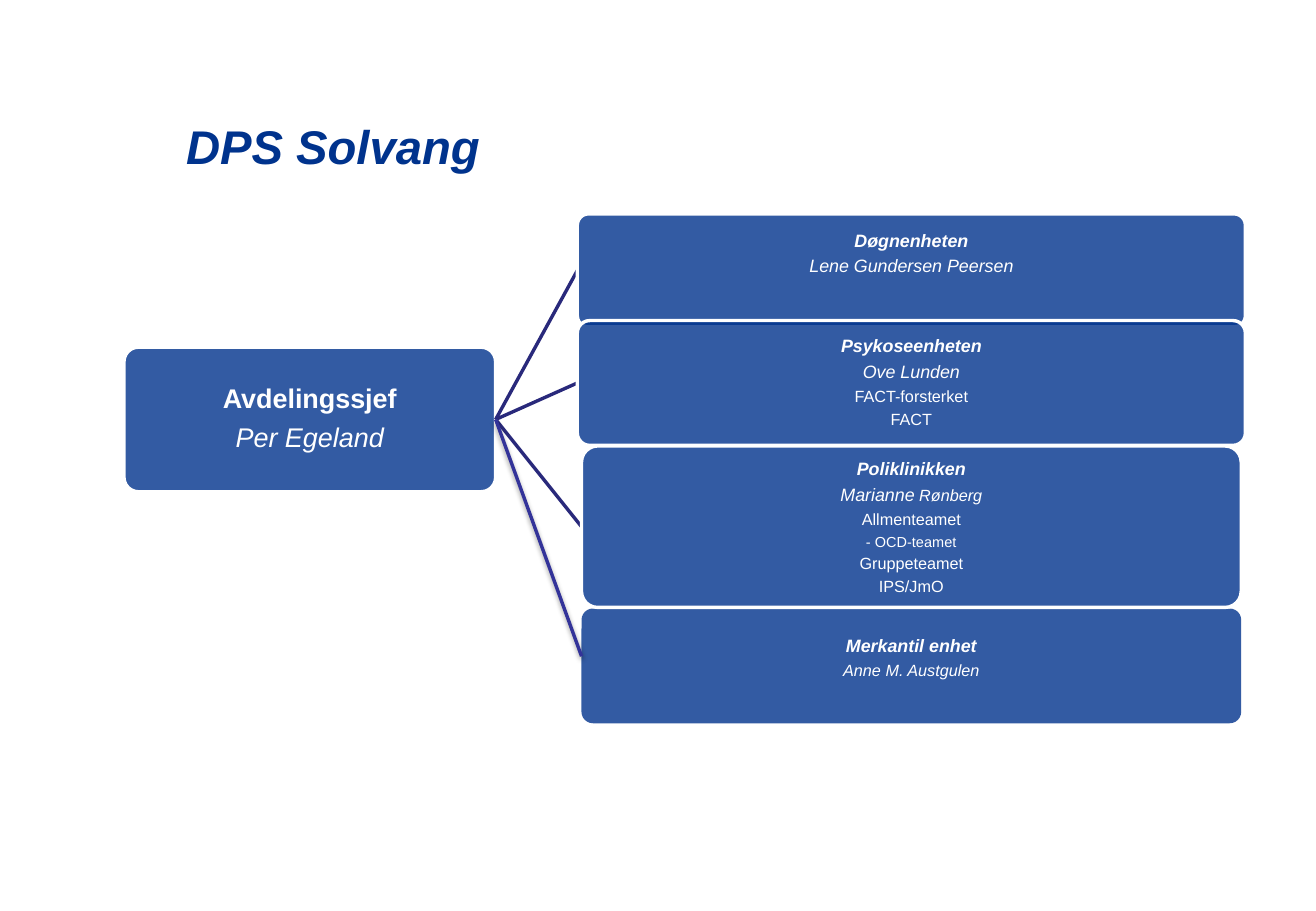
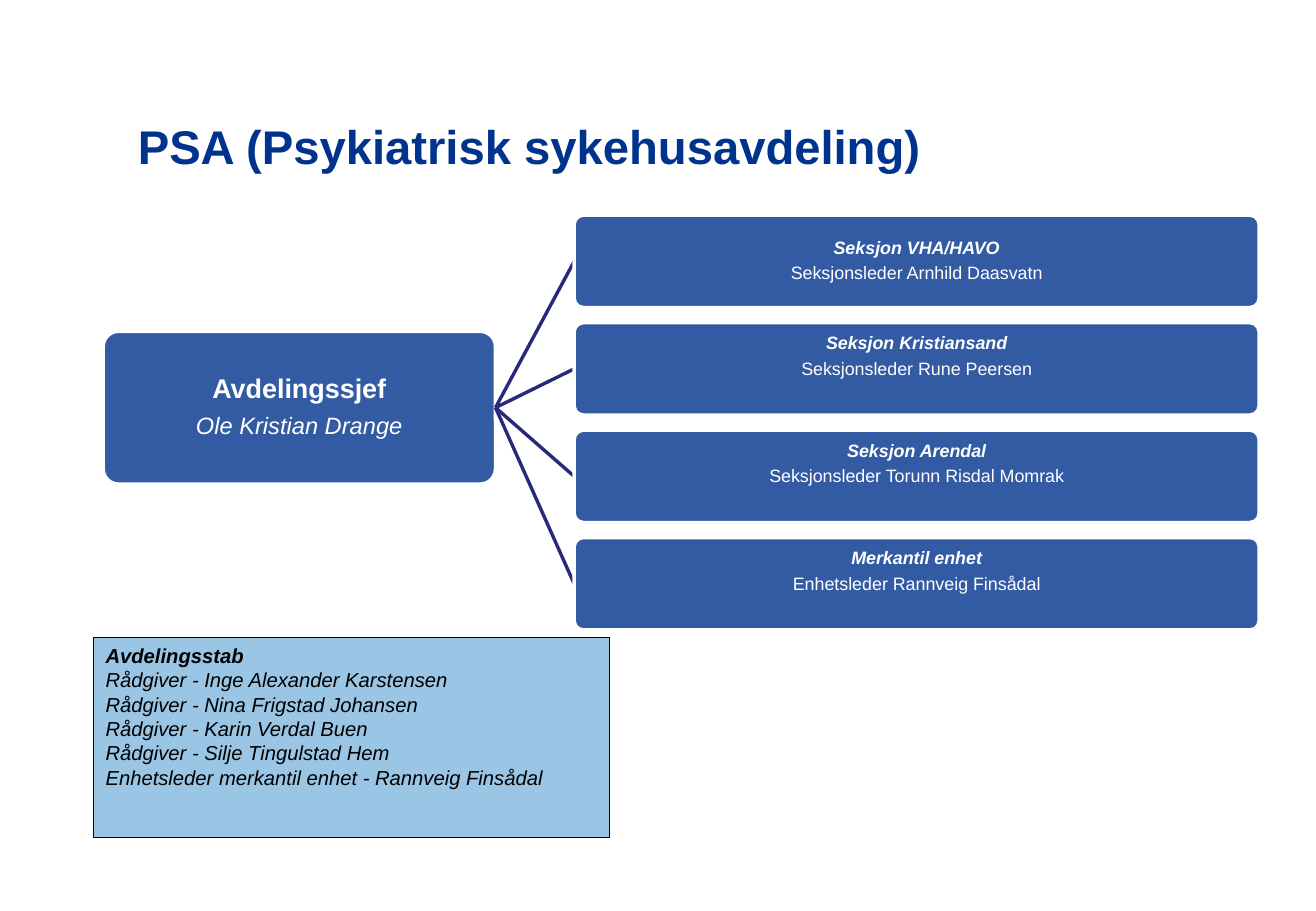
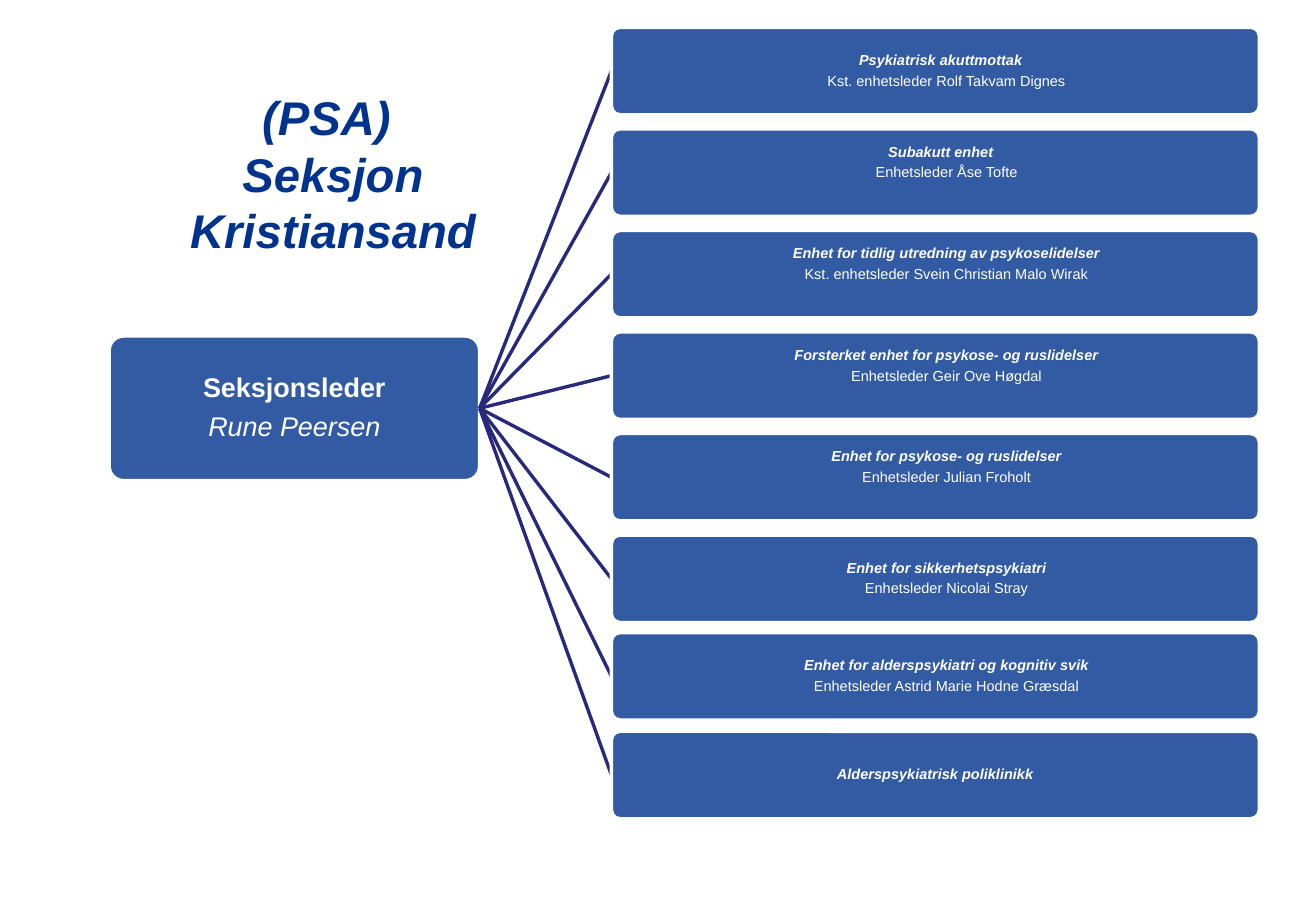
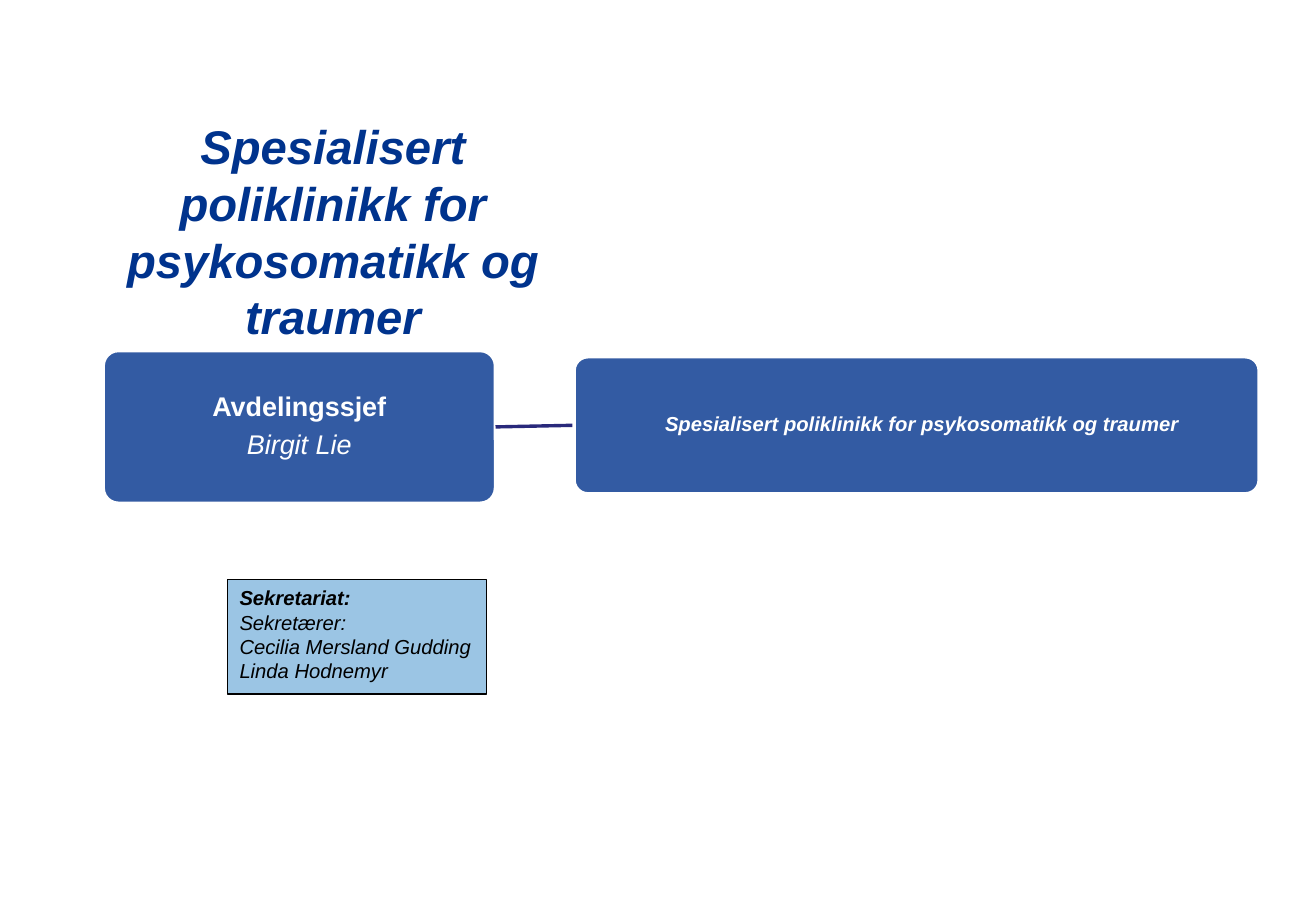
import pptx
import pptx.util
import pptx.dml.color
import pptx.enum.shapes
import pptx.enum.text
import pptx.oxml
import pptx.oxml.ns

Pt = pptx.util.Pt
ALIGN = pptx.enum.text.PP_ALIGN
ANCHOR = pptx.enum.text.MSO_ANCHOR
SHAPE = pptx.enum.shapes.MSO_SHAPE
NS = pptx.oxml.ns.nsdecls("a")

COLOURS = {
    "navy": "00338D",
    "white": "FFFFFF",
    "black": "000000",
    "sky": "7AB2DC",
    "branch": "29297B",
    "staff_branch": "333399",
}
FONT = "Arial"
AFTER = 0.35  # space after a line in a unit, as a share of its size
BOLD_ITALIC = {"bold": True, "italic": True}
ITALIC = {"italic": True}


def colour(name):
    return pptx.dml.color.RGBColor.from_string(COLOURS[name])


def add_line(frame, text, size=12, bold=False, italic=False, ink="white",
             align=ALIGN.CENTER, indent=0, spacing=None, after=0):
    """Append a paragraph; text is a string or a list of (string, size) runs."""
    paragraph = frame.paragraphs[0]
    if paragraph.runs:
        paragraph = frame.add_paragraph()
    if indent:
        properties = paragraph._p.get_or_add_pPr()
        properties.set("marL", str(int(Pt(indent))))
        properties.set("indent", "0")
    paragraph.alignment = align
    paragraph.space_before = Pt(0)
    paragraph.space_after = Pt(round(after * size, 1))
    if spacing:
        paragraph.line_spacing = spacing
    pieces = [(text, size)] if isinstance(text, str) else text
    for words, points in pieces:
        run = paragraph.add_run()
        run.text = words
        run.font.name = FONT
        run.font.size = Pt(points)
        run.font.bold = bold
        run.font.italic = italic
        run.font.color.rgb = colour(ink)


def set_insets(frame, left, top, right, bottom):
    frame.word_wrap = True
    frame.margin_left, frame.margin_top = Pt(left), Pt(top)
    frame.margin_right, frame.margin_bottom = Pt(right), Pt(bottom)


def add_panel(slide, kind, box, fill, opacity, outline, width):
    """A translucent shape; an outline of None leaves the border out."""
    panel = slide.shapes.add_shape(kind, *map(Pt, box))
    panel.shadow.inherit = False
    panel.fill.solid()
    panel.fill.fore_color.rgb = colour(fill)
    tint = panel.fill._xPr.find(".//" + pptx.oxml.ns.qn("a:srgbClr"))
    tint.append(pptx.oxml.parse_xml(f'<a:alpha {NS} val="{opacity * 1000}"/>'))
    if outline:
        panel.line.color.rgb = colour(outline)
        panel.line.width = Pt(width)
    else:
        panel.line.fill.background()
    return panel


def add_unit(slide, box, lines, lower=0, raised=0, outline="white"):
    """A rounded box; lower and raised push its centred text down or up."""
    unit = add_panel(slide, SHAPE.ROUNDED_RECTANGLE, box, "navy", 80, outline, 2)
    unit.adjustments[0] = 0.1
    frame = unit.text_frame
    set_insets(frame, 1, 1 + lower, 1, 1 + raised)
    frame.vertical_anchor = ANCHOR.MIDDLE
    for text, style in lines:
        add_line(frame, text, spacing=0.9, after=AFTER, **style)
    return unit


def add_leader(slide, box, role, name, name_size=16):
    return add_unit(slide, box, [
        (role, {"size": 16, "bold": True}),
        (name, {"size": name_size, "italic": True}),
    ])


def add_branch(slide, leader, end=(0, 0), ink="branch", effect=""):
    """A line from the right side of the leader."""
    branch = slide.shapes.add_connector(
        pptx.enum.shapes.MSO_CONNECTOR.STRAIGHT, 0, 0, *map(Pt, end))
    branch.begin_connect(leader, 3)
    branch.line.color.rgb = colour(ink)
    branch.line.width = Pt(2)
    branch._element.spPr.append(
        pptx.oxml.parse_xml(f"<a:effectLst {NS}>{effect}</a:effectLst>"))
    return branch


def add_branched_units(slide, leader, units):
    """Each branch lies behind the unit that it leads to."""
    for unit in units:
        branch = add_branch(slide, leader)
        branch.end_connect(add_unit(slide, **unit), 1)


def add_staff(slide, box, heading, names):
    staff = add_panel(slide, SHAPE.RECTANGLE, box, "sky", 75, "black", 0.75)
    frame = staff.text_frame
    set_insets(frame, 7.2, 3.6, 0, 3.6)
    frame.vertical_anchor = ANCHOR.TOP
    for index, text in enumerate([heading, *names]):
        add_line(frame, text, bold=index == 0, italic=True, ink="black",
                 align=ALIGN.LEFT)


def add_titled_slide(deck, *lines, box=(67, 66, 260.6, 85), italic=True):
    slide = deck.slides.add_slide(deck.slide_layouts[5])
    title = slide.shapes.title
    title.left, title.top, title.width, title.height = map(Pt, box)
    frame = title.text_frame
    set_insets(frame, 7.2, 3.6, 7.2, 3.6)
    frame.auto_size = pptx.enum.text.MSO_AUTO_SIZE.NONE
    frame.vertical_anchor = ANCHOR.TOP
    for text in lines:
        add_line(frame, text, size=28, bold=True, italic=italic, ink="navy")
    return slide


def build_solvang(deck):
    slide = add_titled_slide(deck, "DPS Solvang")
    heading = {"size": 10.6, **BOLD_ITALIC}
    person = {"size": 10.6, **ITALIC}
    team = {"size": 9.6}

    # Office unit, behind the others
    add_unit(slide, (344.7, 360.7, 391, 68), [
        ("Merkantil enhet", heading),
        ("Anne M. Austgulen", {"size": 9.6, **ITALIC}),
    ], raised=9, outline=None)

    # Leader and clinical units
    leader = add_leader(slide, (73.5, 205.8, 220.3, 85.7),
                        "Avdelingssjef", "Per Egeland")
    add_branched_units(slide, leader, [
        {"box": (342.2, 126.8, 396, 67), "raised": 19, "lines": [
            ("Døgnenheten", heading),
            ("Lene Gundersen Peersen", person)]},
        {"box": (342.2, 190, 396, 74), "lines": [
            ("Psykoseenheten", heading),
            ("Ove Lunden", person),
            ("FACT-forsterket", team),
            ("FACT", team)]},
        {"box": (344.7, 264.4, 391, 95.7), "lower": 2, "lines": [
            ("Poliklinikken", heading),
            ([("Marianne", 10.6), (" Rønberg", 9.6)], person),
            ("Allmenteamet", team),
            ("- OCD-teamet", {"size": 8.6}),
            ("Gruppeteamet", team),
            ("IPS/JmO", team)]},
    ])

    # Branch to the office unit, with a soft shadow
    add_branch(slide, leader, (344.7, 389), "staff_branch",
               '<a:outerShdw blurRad="39370" dist="20320" dir="5400000" '
               'rotWithShape="0"><a:srgbClr val="000000">'
               '<a:alpha val="38000"/></a:srgbClr></a:outerShdw>')


def build_hospital(deck):
    slide = add_titled_slide(deck, "PSA (Psykiatrisk sykehusavdeling)",
                             box=(67, 66, 493, 85), italic=False)
    leader = add_leader(slide, (61.2, 196.4, 232.5, 90.5),
                        "Avdelingssjef", "Ole Kristian Drange", 14)

    # Sections
    sections = [
        ("Seksjon VHA/HAVO", "Seksjonsleder Arnhild Daasvatn", 0),
        ("Seksjon Kristiansand", "Seksjonsleder Rune Peersen", 14.4),
        ("Seksjon Arendal", "Seksjonsleder Torunn Risdal Momrak", 14.4),
        ("Merkantil enhet", "Enhetsleder Rannveig Finsådal", 14.4),
    ]
    add_branched_units(slide, leader, [
        {"box": (340.3, 127.6 + 63.7 * row, 406, 54.7), "raised": raised,
         "lines": [(section, {"size": 10.6, **BOLD_ITALIC}),
                   (head, {"size": 10.6})]}
        for row, (section, head, raised) in enumerate(sections)
    ])

    # Staff
    add_staff(slide, (55.5, 377.8, 306, 118.8), "Avdelingsstab", [
        "Rådgiver - Inge Alexander Karstensen",
        "Rådgiver - Nina Frigstad Johansen",
        "Rådgiver - Karin Verdal Buen",
        "Rådgiver - Silje Tingulstad Hem",
        "Enhetsleder merkantil enhet - Rannveig Finsådal",
    ])


def build_kristiansand(deck):
    slide = add_titled_slide(deck, "(PSA) ", "Seksjon Kristiansand",
                             box=(67, 48.6, 260.6, 102.4))
    leader = add_leader(slide, (64.7, 199.2, 219.6, 85.7),
                        "Seksjonsleder", "Rune Peersen")

    # Units: name, head, indent of the name, rise of the text
    units = [
        ("Psykiatrisk akuttmottak",
         "Kst. enhetsleder Rolf Takvam Dignes", 6.5, 0),
        ("Subakutt enhet", "Enhetsleder Åse Tofte", 6.5, 11.5),
        ("Enhet for tidlig utredning av psykoselidelser",
         "Kst. enhetsleder Svein Christian Malo Wirak", 13.5, 11.5),
        ("Forsterket enhet for psykose- og ruslidelser",
         "Enhetsleder Geir Ove Høgdal", 13.5, 11.5),
        ("Enhet for psykose- og ruslidelser",
         "Enhetsleder Julian Froholt", 13.5, 11.5),
        ("Enhet for sikkerhetspsykiatri",
         "Enhetsleder Nicolai Stray", 13.5, 0),
        ("Enhet for alderspsykiatri og kognitiv svik",
         "Enhetsleder Astrid Marie Hodne Græsdal", 13.5, 0),
        ("Alderspsykiatrisk poliklinikk", None, 0, 0),
    ]
    tops = [16.2 + 60.2 * row for row in range(6)] + [375, 433.5]
    branched = []
    for top, (name, head, indent, raised) in zip(tops, units):
        lines = [(name, {"size": 8.6, "indent": indent, **BOLD_ITALIC})]
        if head:
            lines.append((head, {"size": 8.6, "indent": 13.5}))
        branched.append({"box": (362.4, top, 384, 51.8),
                         "lines": lines, "raised": raised})
    add_branched_units(slide, leader, branched)


def build_psychosomatics(deck):
    clinic = "Spesialisert poliklinikk for psykosomatikk og traumer"
    slide = add_titled_slide(deck, clinic)
    leader = add_leader(slide, (61.2, 207.8, 232.5, 90.5),
                        "Avdelingssjef", "Birgit Lie")
    add_branched_units(slide, leader, [
        {"box": (340.3, 211.5, 406, 81.2),
         "lines": [(clinic, {"size": 12, "indent": 6.5, **BOLD_ITALIC})]},
    ])

    # Secretariat
    add_staff(slide, (134.9, 343.7, 153.4, 67.7), "Sekretariat:", [
        "Sekretærer:", "Cecilia Mersland Gudding", "Linda Hodnemyr",
    ])


def main():
    deck = pptx.Presentation()
    deck.slide_width, deck.slide_height = Pt(780), Pt(540)
    for build in (build_solvang, build_hospital, build_kristiansand,
                  build_psychosomatics):
        build(deck)
    deck.save("out.pptx")


if __name__ == "__main__":
    main()
